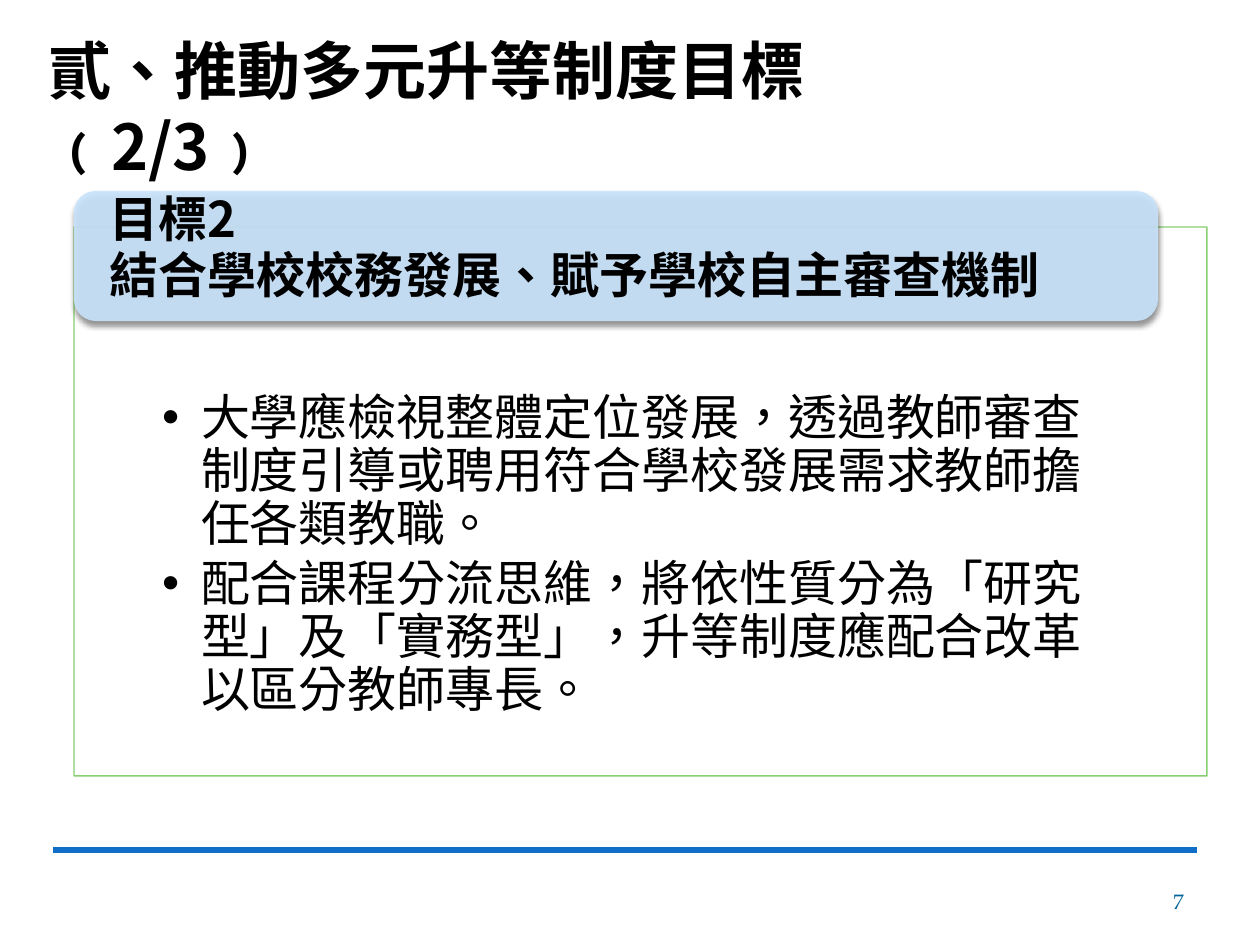
import dataclasses

import lxml.etree
import pptx
import pptx.dml.color
import pptx.enum.shapes
import pptx.enum.text
import pptx.oxml
import pptx.oxml.ns
import pptx.util

SCALE = 914400 // 126
ALIGN = pptx.enum.text.PP_ALIGN
ANCHOR = pptx.enum.text.MSO_ANCHOR
SHAPE = pptx.enum.shapes.MSO_SHAPE
qn = pptx.oxml.ns.qn


@dataclasses.dataclass(frozen=True)
class Theme:
    text: str = "000000"
    panel: str = "FFFFFF"
    border: str = "7CCA62"
    banner: str = "C8E3FB"
    rule: str = "0F6FC6"
    number: str = "006699"
    sans: str = "Noto Sans CJK SC"
    serif: str = "TeX Gyre Pagella"
    language: str = "zh-TW"
    title_size: int = 36
    body_size: int = 28
    number_size: int = 12
    opacity: int = 90


THEME = Theme()


def px(value):
    return pptx.util.Emu(value * SCALE)


def color(value):
    return pptx.dml.color.RGBColor.from_string(value)


def place(shape, box):
    shape.left, shape.top, shape.width, shape.height = map(px, box)


def set_opacity(fill_parent, percent):
    target = fill_parent.find(qn("a:solidFill"))[0]
    lxml.etree.SubElement(target, qn("a:alpha"), val=str(percent * 1000))


def add_shadow(shape):
    shadow = pptx.oxml.parse_xml(
        '<a:effectLst xmlns:a="http://schemas.openxmlformats.org/drawingml/2006/main">'
        '<a:outerShdw blurRad="38100" dist="30480" dir="5400000" rotWithShape="0">'
        '<a:srgbClr val="000000"><a:alpha val="45000"/></a:srgbClr>'
        '</a:outerShdw></a:effectLst>')
    properties = shape._element.spPr
    properties.remove(properties.find(qn("a:effectLst")))
    properties.append(shadow)


def set_frame(shape, insets, anchor=ANCHOR.TOP):
    frame = shape.text_frame
    frame.word_wrap = True
    frame.auto_size = pptx.enum.text.MSO_AUTO_SIZE.NONE
    frame.vertical_anchor = anchor
    (frame.margin_left, frame.margin_top,
     frame.margin_right, frame.margin_bottom) = map(px, insets)
    return frame


def set_bullet(paragraph, indent):
    properties = paragraph._p.get_or_add_pPr()
    properties.set("marL", str(px(indent)))
    properties.set("indent", str(-px(indent)))
    lxml.etree.SubElement(properties, qn("a:buChar"), char="•")


def write(paragraph, text, size, font=THEME.sans, fill=THEME.text, bold=False,
          align=ALIGN.LEFT, spacing=None, after=0):
    paragraph.alignment = align
    paragraph.line_spacing = spacing
    paragraph.space_before = pptx.util.Pt(0)
    paragraph.space_after = pptx.util.Pt(after)
    run = paragraph.add_run()
    run.text = text
    run.font.name = font
    run.font.size = pptx.util.Pt(size)
    run.font.bold = bold
    run.font.color.rgb = color(fill)
    properties = run._r.rPr
    properties.set("lang", THEME.language)
    east_asian = lxml.etree.Element(qn("a:ea"), typeface=THEME.sans)
    properties.find(qn("a:latin")).addnext(east_asian)


def add_panel(slide, kind, box, fill):
    shape = slide.shapes.add_shape(kind, *map(px, box))
    shape.shadow.inherit = False
    shape.fill.solid()
    shape.fill.fore_color.rgb = color(fill)
    set_opacity(shape._element.spPr, THEME.opacity)
    shape.line.fill.background()
    return shape


def build_title(slide, box, text):
    title = slide.shapes.title
    place(title, box)
    frame = set_frame(title, (13, 6, 40, 6))
    write(frame.paragraphs[0], text, THEME.title_size, bold=True, spacing=1.0)


def build_content(slide, box, items):
    panel = add_panel(slide, SHAPE.RECTANGLE, box, THEME.panel)
    panel.line.color.rgb = color(THEME.border)
    panel.line.width = pptx.util.Pt(0.79)
    set_opacity(panel.line._ln, THEME.opacity)
    body = slide.placeholders[1]
    panel._element.addnext(body._element)
    place(body, box)
    frame = set_frame(body, (88, 166, 88, 28))
    for index, item in enumerate(items):
        paragraph = frame.add_paragraph() if index else frame.paragraphs[0]
        set_bullet(paragraph, 39)
        for text, font in ((item, THEME.sans), ("。", THEME.serif)):
            write(paragraph, text, THEME.body_size, font=font, spacing=0.9, after=4.2)


def build_banner(slide, box, lines):
    left, top, width, height = box
    banner = add_panel(slide, SHAPE.ROUNDED_RECTANGLE, box, THEME.banner)
    add_shadow(banner)
    inner = (left + 6, top + 6, width - 12, height - 12)
    label = slide.shapes.add_textbox(*map(px, inner))
    frame = set_frame(label, (30, 0, 30, 0), ANCHOR.MIDDLE)
    for index, line in enumerate(lines):
        paragraph = frame.add_paragraph() if index else frame.paragraphs[0]
        write(paragraph, line, THEME.body_size, bold=True,
              spacing=pptx.util.Pt(22), after=9.8)


def build_footer(slide, box, number):
    left, top, width, height = box
    rule = slide.shapes.add_connector(
        pptx.enum.shapes.MSO_CONNECTOR.STRAIGHT,
        px(left), px(top), px(left + width), px(top))
    rule.line.color.rgb = color(THEME.rule)
    rule.line.width = pptx.util.Pt(3)
    lxml.etree.SubElement(rule._element.spPr, qn("a:effectLst"))
    label = slide.shapes.add_textbox(
        px(left + width - 294), px(top + 26), px(294), px(height - 26))
    frame = set_frame(label, (13, 6, 13, 6), ANCHOR.MIDDLE)
    write(frame.paragraphs[0], number, THEME.number_size, font=THEME.serif,
          fill=THEME.number, align=ALIGN.RIGHT)


def main():
    presentation = pptx.Presentation()
    presentation.slide_width, presentation.slide_height = px(1260), px(945)
    slide = presentation.slides.add_slide(presentation.slide_layouts[1])
    build_footer(slide, (53, 850, 1144, 76), "7")
    build_content(slide, (74, 227, 1133, 549), (
        "大學應檢視整體定位發展，透過教師審查制度引導或聘用符合學校發展需求教師擔任各類教職",
        "配合課程分流思維，將依性質分為「研究型」及「實務型」，升等制度應配合改革以區分教師專長",
    ))
    build_banner(slide, (74, 191, 1084, 130),
                 ("目標2", "結合學校校務發展、賦予學校自主審查機制"))
    build_title(slide, (35, 26, 1012, 89), "貳、推動多元升等制度目標﹙2/3﹚")
    presentation.save("out.pptx")


if __name__ == "__main__":
    main()
